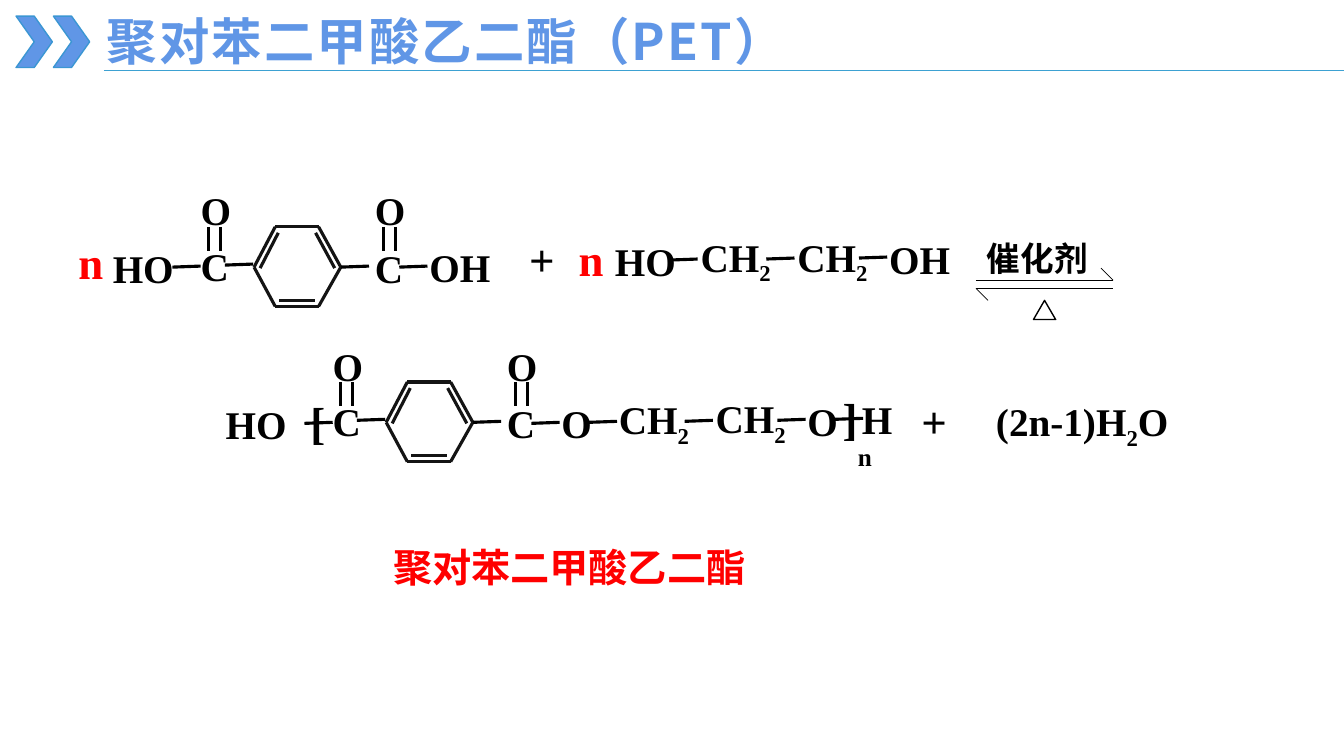
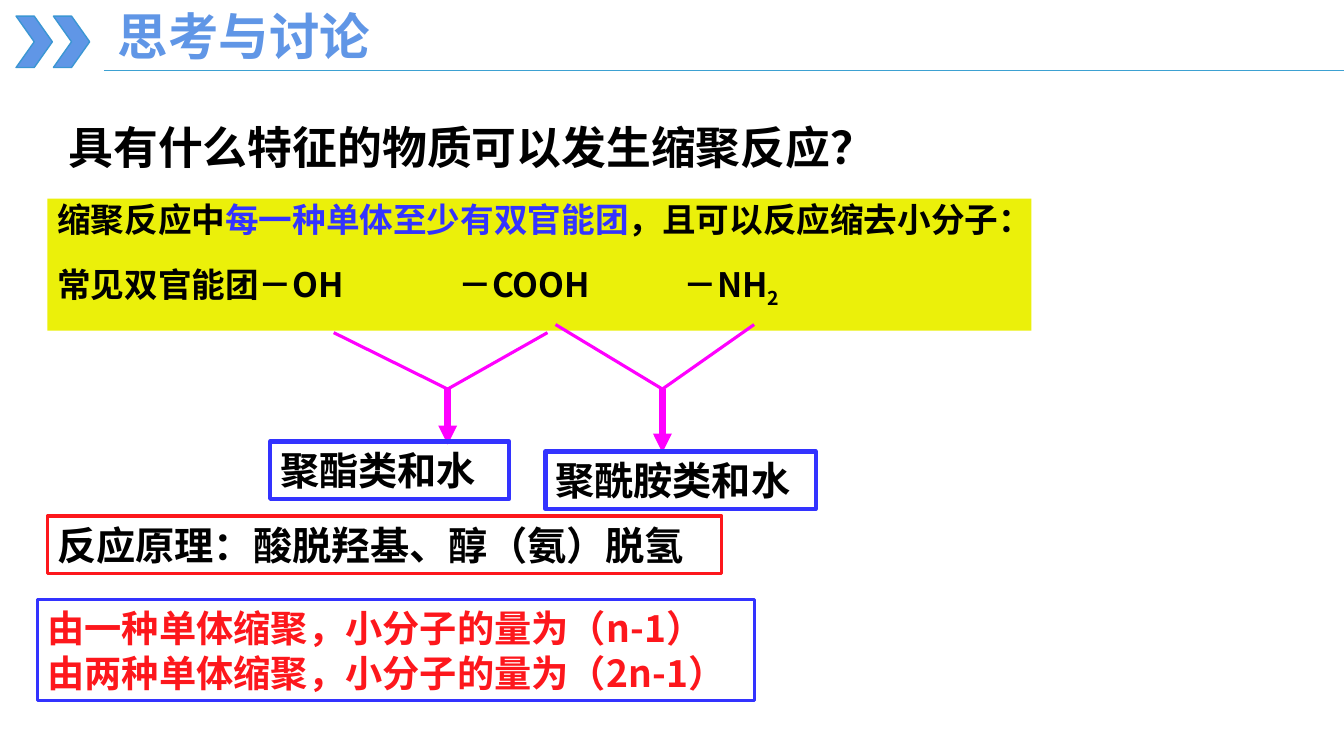
from pptx import Presentation
from pptx.dml.color import RGBColor
from pptx.enum.shapes import MSO_CONNECTOR, MSO_SHAPE
from pptx.enum.text import MSO_ANCHOR, PP_ALIGN
from pptx.oxml.ns import qn
from pptx.util import Inches, Pt
from lxml.etree import SubElement

BLACK = RGBColor(0, 0, 0)
WHITE = RGBColor(255, 255, 255)
INK = RGBColor(0x14, 0x14, 0x14)
RED = RGBColor(255, 0, 0)
CRIMSON = RGBColor(0xFD, 0x17, 0x1C)
BLUE = RGBColor(0x33, 0x33, 0xFF)
SKY = RGBColor(0x60, 0x96, 0xE6)
EDGE = RGBColor(0x3B, 0x96, 0xD3)
RULE = RGBColor(0x3D, 0xA1, 0xD2)
YELLOW = RGBColor(0xEB, 0xF0, 0x0A)
PINK = RGBColor(255, 0, 255)
SERIF = "Times New Roman"
SANS = "Noto Sans CJK SC"


class Deck:
    """Holds the style and the current slide, and draws each kind of element."""

    def __init__(self):
        self.deck = Presentation()
        self.deck.slide_width = Inches(13.33)
        self.deck.slide_height = Inches(7.5)
        self.slide = None

    def page(self, title, x, y, face=SANS, gap=0):
        self.slide = self.deck.slides.add_slide(self.deck.slide_layouts[6])
        for left in (0.16, 0.53):
            self.shape(MSO_SHAPE.CHEVRON, left, 0.16, 0.36, 0.51, SKY, EDGE, 1)
        self.line(1.03, 0.7, 13.33, 0.7, RULE, 0.5)
        box = self.text(title, x, y, 7.98, 0.71, 36, SKY, face)
        if gap:
            for run in box.text_frame.paragraphs[0].runs:
                run.font._element.set("spc", str(gap))

    def shape(self, kind, x, y, w, h, fill=None, edge=None, width=1):
        item = self.slide.shapes.add_shape(kind, Inches(x), Inches(y), Inches(w), Inches(h))
        item.shadow.inherit = False
        if fill is None:
            item.fill.background()
        else:
            item.fill.solid()
            item.fill.fore_color.rgb = fill
        if edge is None:
            item.line.fill.background()
        else:
            item.line.color.rgb = edge
            item.line.width = Pt(width)
        return item

    def line(self, x1, y1, x2, y2, color=BLACK, width=2.25, arrow=False):
        item = self.slide.shapes.add_connector(
            MSO_CONNECTOR.STRAIGHT, Inches(x1), Inches(y1), Inches(x2), Inches(y2))
        item.line.color.rgb = color
        item.line.width = Pt(width)
        if arrow:
            SubElement(item.line._get_or_add_ln(), qn("a:tailEnd"), type="triangle")
        SubElement(item._element.spPr, qn("a:effectLst"))

    def label(self, item, lines, size, color, face):
        frame = item.text_frame
        frame.word_wrap = True
        frame.vertical_anchor = MSO_ANCHOR.MIDDLE
        frame.margin_top = frame.margin_bottom = 0
        for i, parts in enumerate(lines):
            para = frame.add_paragraph() if i else frame.paragraphs[0]
            para.alignment = PP_ALIGN.LEFT
            for part in parts:
                run = para.add_run()
                run.text = part.lstrip("_")
                run.font.size = Pt(size)
                run.font.bold = True
                run.font.name = face
                run.font.color.rgb = color
                props = run.font._element
                SubElement(props, qn("a:ea"), typeface=SANS)
                if part.startswith("_"):
                    props.set("baseline", "-25000")
        return item

    def text(self, words, x, y, w, h, size, color=BLACK, face=SERIF):
        parts = [words] if isinstance(words, str) else words
        item = self.slide.shapes.add_textbox(Inches(x), Inches(y), Inches(w), Inches(h))
        return self.label(item, [parts], size, color, face)

    def panel(self, lines, x, y, w, h, size, color=BLACK, fill=None, edge=None, width=1):
        item = self.shape(MSO_SHAPE.RECTANGLE, x, y, w, h, fill, edge, width)
        return self.label(item, lines, size, color, SANS)

    def atom(self, words, x, y):
        self.text(words, x, y, 1.05, 0.57, 28)

    def sign(self, words, x, y, color=BLACK):
        self.text(words, x, y, 0.77, 0.64, 32, color)

    def bond(self, x, y):
        self.line(x, y, x + 0.28, y - 0.01)

    def ring(self, x, y):
        ends = [(0, 0), (0.21, -0.4), (0.64, -0.4), (0.86, 0), (0.64, 0.39), (0.21, 0.39)]
        sides = list(zip(ends, ends[1:] + ends[:1]))
        sides += [((0.25, 0.33), (0.6, 0.33)), ((0.61, -0.34), (0.8, 0.01)),
                  ((0.24, -0.34), (0.06, 0.01))]
        for (x1, y1), (x2, y2) in sides:
            self.line(x + x1, y + y1, x + x2, y + y2, INK)

    def diacyl(self, x, y):
        self.ring(x, y)
        self.bond(x - 0.29, y - 0.02)
        self.bond(x + 0.86, y)
        for left, top in ((x - 0.63, y - 0.3), (x + 1.1, y - 0.28)):
            self.atom("C", left, top)
            self.atom("O", left, y - 0.85)
            for step in (0.18, 0.3):
                self.line(left + step, y - 0.4, left + step, y - 0.16)

    def fork(self, left, right, top, x, foot):
        for start in (left, right):
            self.line(start, top, x, 3.86, PINK)
        self.line(x, 3.86, x, foot, PINK, 4.5, True)


def react(deck):
    deck.page("聚对苯二甲酸乙二酯（PET）", 0.96, 0.04, gap=150)
    for x, y in ((2.52, 2.65), (3.83, 4.19)):
        deck.diacyl(x, y)
    for x, y in ((1.71, 2.65), (3.96, 2.65), (6.64, 2.58), (7.6, 2.57), (8.52, 2.56),
                 (3.02, 4.2), (5.27, 4.2), (5.84, 4.19), (6.79, 4.18), (7.71, 4.17),
                 (8.28, 4.16)):
        deck.bond(x, y)
    for words, x, y in (("HO", 1.02, 2.37), ("OH", 4.16, 2.36), ("HO", 6, 2.3),
                        (["CH", "_2"], 6.85, 2.29), (["CH", "_2"], 7.81, 2.29),
                        ("OH", 8.72, 2.28), ("HO", 2.14, 3.92), ("O", 5.47, 3.91),
                        (["CH", "_2"], 6.04, 3.9), (["CH", "_2"], 7, 3.89),
                        ("O", 7.91, 3.89), ("H", 8.45, 3.87)):
        deck.atom(words, x, y)
    for words, x, y, color in (("n", 0.68, 2.28, RED), ("n", 5.64, 2.25, RED),
                               ("+", 5.15, 2.25, BLACK), ("+", 9.04, 3.85, BLACK),
                               ("[", 2.98, 3.86, BLACK), ("]", 8.26, 3.82, BLACK)):
        deck.sign(words, x, y, color)
    deck.text("n", 8.41, 4.3, 0.51, 0.45, 18)
    deck.text(["(2n-1)H", "_2", "O"], 9.78, 3.92, 2.12, 0.57, 28)
    deck.text("催化剂", 9.69, 2.31, 1.4, 0.5, 24)
    deck.shape(MSO_SHAPE.ISOSCELES_TRIANGLE, 10.25, 2.98, 0.22, 0.19, WHITE, BLACK)
    for y, tip, barb in ((2.78, 11.04, -0.12), (2.86, 9.68, 0.12)):
        deck.line(9.68, y, 11.04, y, width=0.5)
        deck.line(tip, y, tip + barb, y + barb, width=0.5)
    deck.text("聚对苯二甲酸乙二酯", 3.8, 5.34, 3.8, 0.57, 28, RED)


def discuss(deck):
    deck.page("思考与讨论", 1.07, 0, "Arial")
    deck.text("具有什么特征的物质可以发生缩聚反应？", 0.58, 1.13, 11.22, 0.64, 32, face=SANS)
    rule = deck.panel([["缩聚反应中", "每一种单体至少有双官能团", "，且可以反应缩去小分子："],
                       ["常见双官能团－OH\t－COOH\t－NH", "_2"]],
                      0.47, 1.97, 9.76, 1.31, 24, fill=YELLOW).text_frame
    rule.vertical_anchor = MSO_ANCHOR.TOP
    first, groups = rule.paragraphs
    first.runs[1].font.color.rgb = BLUE
    groups.space_before = Pt(17.5)
    tabs = SubElement(groups._p.get_or_add_pPr(), qn("a:tabLst"))
    for place in (3.98, 6.21):
        SubElement(tabs, qn("a:tab"), pos=str(Inches(place)), algn="l")
    deck.fork(3.31, 5.43, 3.3, 4.44, 4.41)
    deck.panel([["聚酯类和水"]], 2.68, 4.38, 2.37, 0.57, 28, edge=BLUE, width=3)
    deck.fork(5.51, 7.48, 3.22, 6.57, 4.49)
    deck.panel([["聚酰胺类和水"]], 5.41, 4.48, 2.68, 0.57, 28, edge=BLUE, width=3)
    deck.panel([["反应原理：酸脱羟基、醇（氨）脱氢"]],
               0.47, 5.12, 6.69, 0.57, 28, edge=CRIMSON, width=2.25)
    count = deck.panel([["由一种单体缩聚，小分子的量为（n-1）"],
                        ["由两种单体缩聚，小分子的量为（2n-1）"]],
                       0.37, 5.95, 7.11, 1, 26.6, CRIMSON, edge=BLUE, width=2.25)
    for para in count.text_frame.paragraphs:
        para.line_spacing = Pt(32)


def main():
    deck = Deck()
    react(deck)
    discuss(deck)
    deck.deck.save("out.pptx")


if __name__ == "__main__":
    main()
